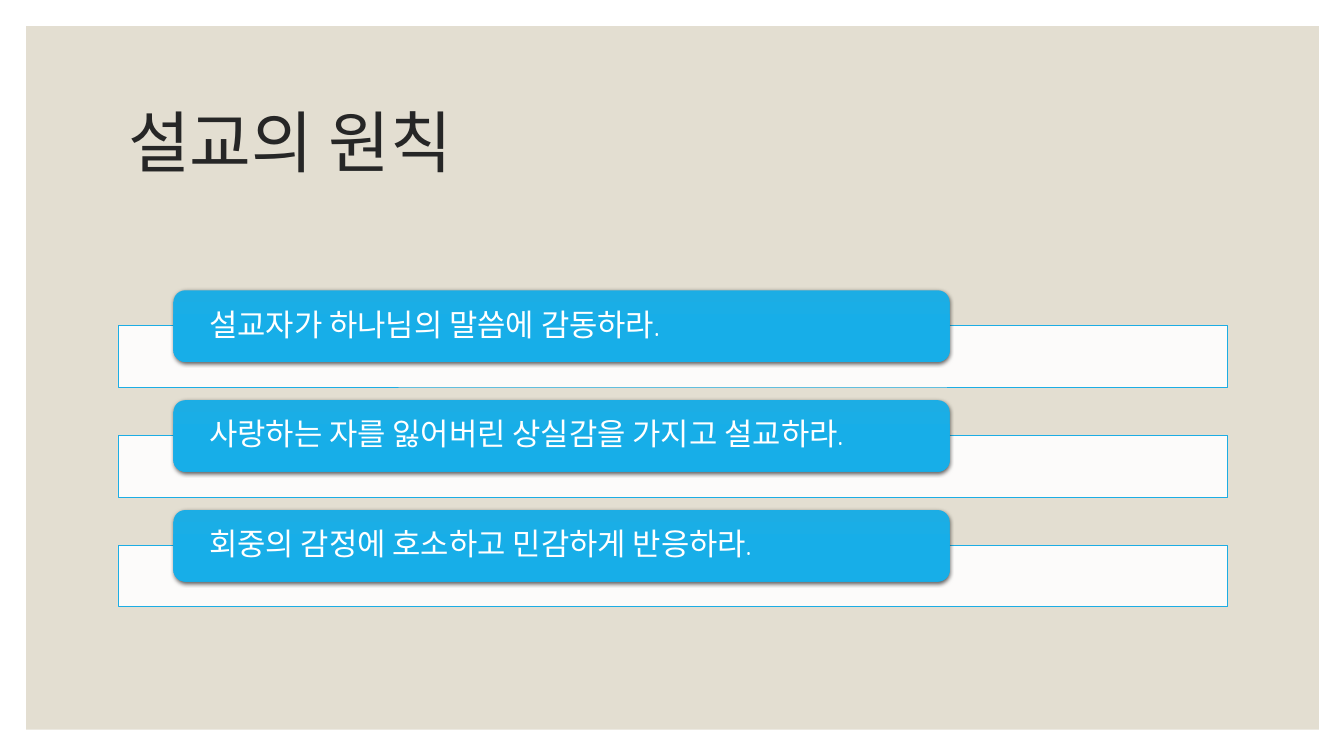
from lxml import etree
from pptx import Presentation
from pptx.dml.color import RGBColor
from pptx.enum.shapes import MSO_SHAPE
from pptx.enum.text import MSO_ANCHOR, PP_ALIGN
from pptx.oxml.ns import qn
from pptx.util import Inches, Pt

RECTANGLE = MSO_SHAPE.RECTANGLE
ROUNDED = MSO_SHAPE.ROUNDED_RECTANGLE
MIDDLE = MSO_ANCHOR.MIDDLE
LEFT = PP_ALIGN.LEFT
TITLE_ONLY = 5

PRINCIPLES = [
    "설교자가 하나님의 말씀에 감동하라.",
    "사랑하는 자를 잃어버린 상실감을 가지고 설교하라.",
    "회중의 감정에 호소하고 민감하게 반응하라.",
]
ROW_TOP = 2.88
ROW_PITCH = 1.09


def color(code):
    return RGBColor.from_string(code)


class PrincipleSlide:
    font = "Quicksand"
    accent = "1CADE4"
    accent_deep = "17AEE8"
    sand = "E3DED1"
    ink = "262626"
    white = "FFFFFF"

    def __init__(self, deck):
        self.page = deck.slides.add_slide(deck.slide_layouts[TITLE_ONLY])

    def shape(self, kind, left, top, width, height):
        box = self.page.shapes.add_shape(
            kind, Inches(left), Inches(top), Inches(width), Inches(height))
        box.shadow.inherit = False
        box.line.fill.background()
        return box

    def set_text(self, box, text, size, code, inset, space_after=0):
        frame = box.text_frame
        frame.text = text
        settings = {
            "word_wrap": True, "vertical_anchor": MIDDLE,
            "margin_left": Inches(inset), "margin_right": Inches(inset),
            "margin_top": 0, "margin_bottom": 0,
        }
        for name, value in settings.items():
            setattr(frame, name, value)
        para = frame.paragraphs[0]
        spacing = {"alignment": LEFT, "line_spacing": 0.9,
                   "space_after": Pt(space_after)}
        for name, value in spacing.items():
            setattr(para, name, value)
        span = para.runs[0]
        for name, value in {"name": self.font, "size": Pt(size)}.items():
            setattr(span.font, name, value)
        span.font.color.rgb = color(code)

    def panel(self):
        """Draw the sand background panel behind the title."""
        box = self.shape(RECTANGLE, 0.26, 0.26, 12.82, 6.98)
        box.fill.solid()
        box.fill.fore_color.rgb = color(self.sand)
        self.page.shapes.element.insert(2, box.element)

    def title(self, text):
        box = self.page.shapes.title
        place = {"left": 1.17, "top": 0.7, "width": 11, "height": 1.5}
        for name, value in place.items():
            setattr(box, name, Inches(value))
        self.set_text(box, text, 48, self.ink, 0.1)

    def bar(self, top):
        """Draw the wide outlined bar, ten percent transparent."""
        box = self.shape(RECTANGLE, 1.17, top, 11, 0.61)
        box.fill.solid()
        box.fill.fore_color.rgb = color(self.white)
        fill = box.element.spPr.find(qn("a:solidFill"))
        etree.SubElement(fill[0], qn("a:alpha"), val="90000")
        box.line.color.rgb = color(self.accent)
        box.line.width = Pt(0.5)

    def label(self, top, text):
        """Draw the rounded gradient label with its text."""
        box = self.shape(ROUNDED, 1.72, top, 7.7, 0.71)
        box.fill.gradient()
        box.fill.gradient_angle = 270
        stops = [(0, self.accent), (0.5, self.accent_deep)]
        for stop, (position, code) in zip(box.fill.gradient_stops, stops):
            stop.position = position
            stop.color.rgb = color(code)
        self.drop_shadow(box)
        self.set_text(box, text, 22, self.white, 0.32, space_after=8)

    def drop_shadow(self, box):
        effects = box.element.spPr.find(qn("a:effectLst"))
        shadow = etree.SubElement(
            effects, qn("a:outerShdw"), blurRad=str(Pt(3)), dist=str(Pt(1)),
            dir="5400000", algn="ctr", rotWithShape="0")
        black = etree.SubElement(shadow, qn("a:srgbClr"), val="000000")
        etree.SubElement(black, qn("a:alpha"), val="63000")


def main():
    deck = Presentation()
    deck.slide_width = Inches(13.33)
    deck.slide_height = Inches(7.5)
    slide = PrincipleSlide(deck)
    slide.panel()
    slide.title("설교의 원칙")
    for row, principle in enumerate(PRINCIPLES):
        top = ROW_TOP + row * ROW_PITCH
        slide.bar(top + 0.35)
        slide.label(top, principle)
    deck.save("out.pptx")


if __name__ == "__main__":
    main()
